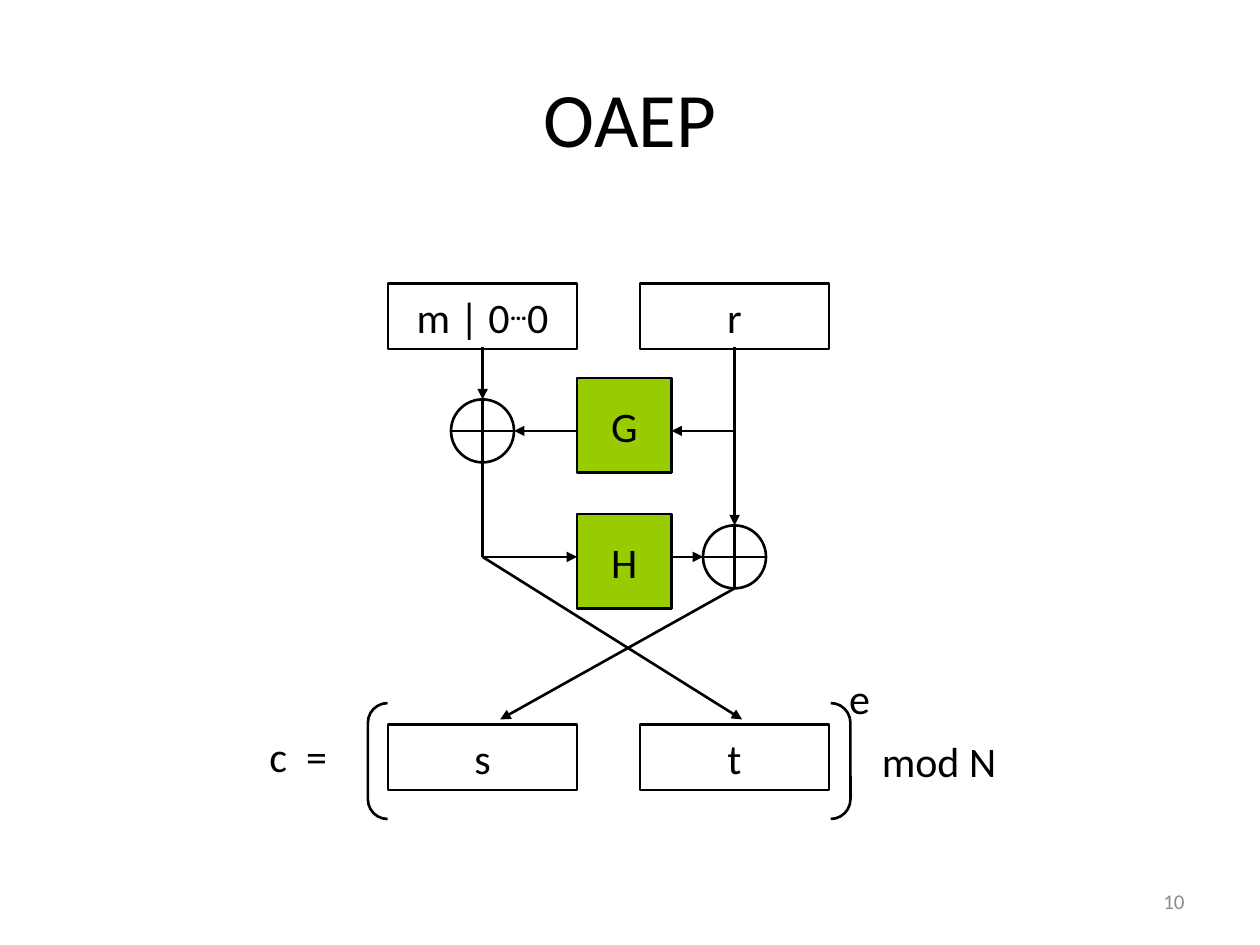
from dataclasses import dataclass

import lxml.etree
import pptx
import pptx.dml.color
import pptx.enum.shapes
import pptx.enum.text
import pptx.oxml.ns
import pptx.util
from pptx.util import Inches

SHAPE = pptx.enum.shapes.MSO_SHAPE
ALIGN = pptx.enum.text.PP_ALIGN
ANCHOR = pptx.enum.text.MSO_ANCHOR


@dataclass(frozen=True)
class Theme:
    font: str = "Calibri"
    ink: str = "000000"
    paper: str = "FFFFFF"
    hash_fill: str = "99CC00"
    muted: str = "8C8C8C"
    title_size: int = 44
    body_size: int = 24
    number_size: int = 12
    line_width: float = 1.5


@dataclass(frozen=True)
class Span:
    text: str
    raised: bool = False


@dataclass(frozen=True)
class Box:
    left: float
    top: float
    width: float
    height: float
    fill: str
    spans: tuple[Span, ...]


@dataclass(frozen=True)
class Label:
    left: float
    top: float
    width: float
    height: float
    text: str


@dataclass(frozen=True)
class Wire:
    start: tuple[float, float]
    end: tuple[float, float]
    arrow: bool = True


THEME = Theme()
LEFT_X, RIGHT_X = 3.83, 5.83
MASK_Y, SEED_Y = 3.42, 4.42
RADIUS = 0.25
HASH_LEFT, HASH_SIZE = 4.58, 0.75
HASH_RIGHT = HASH_LEFT + HASH_SIZE
FIELD_WIDTH, FIELD_HEIGHT = 1.5, 0.52
INPUT_TOP, OUTPUT_TOP = 2.25, 5.75


def field(center: float, top: float, *spans: Span) -> Box:
    return Box(center - FIELD_WIDTH / 2, top, FIELD_WIDTH, FIELD_HEIGHT, THEME.paper, spans)


def hash_box(top: float, name: str) -> Box:
    return Box(HASH_LEFT, top, HASH_SIZE, HASH_SIZE, THEME.hash_fill, (Span(name),))


BOXES = (
    field(LEFT_X, INPUT_TOP, Span("m | 0"), Span("…", raised=True), Span("0")),
    field(RIGHT_X, INPUT_TOP, Span("r")),
    hash_box(3, "G"),
    hash_box(4.08, "H"),
    field(LEFT_X, OUTPUT_TOP, Span("s")),
    field(RIGHT_X, OUTPUT_TOP, Span("t")),
)

XOR_CENTERS = ((LEFT_X, MASK_Y), (RIGHT_X, SEED_Y))

WIRES = (
    Wire((RIGHT_X, 2.75), (RIGHT_X, MASK_Y), arrow=False),
    Wire((RIGHT_X, MASK_Y), (HASH_RIGHT, MASK_Y)),
    Wire((HASH_LEFT, MASK_Y), (LEFT_X + RADIUS, MASK_Y)),
    Wire((LEFT_X, 2.75), (LEFT_X, MASK_Y - RADIUS)),
    Wire((LEFT_X, MASK_Y + RADIUS), (LEFT_X, SEED_Y), arrow=False),
    Wire((LEFT_X, SEED_Y), (HASH_LEFT, SEED_Y)),
    Wire((HASH_RIGHT, SEED_Y), (RIGHT_X - RADIUS, SEED_Y)),
    Wire((RIGHT_X, MASK_Y), (RIGHT_X, SEED_Y - RADIUS)),
    Wire((LEFT_X, SEED_Y), (5.89, 5.71)),
    Wire((RIGHT_X, SEED_Y + RADIUS), (3.97, 5.71)),
)

LABELS = (
    Label(6.64, 5.29, 0.37, 0.5, "e"),
    Label(6.9, 5.79, 1.12, 0.5, "mod N"),
    Label(2.04, 5.75, 0.74, 0.5, "c  ="),
)


def color(value: str) -> pptx.dml.color.RGBColor:
    return pptx.dml.color.RGBColor.from_string(value)


def add_span(para, span: Span, size: int, ink: str = THEME.ink) -> None:
    run = para.add_run()
    run.text = span.text
    run.font.name = THEME.font
    run.font.size = pptx.util.Pt(size)
    run.font.color.rgb = color(ink)
    if span.raised:
        run.font.bold = True
        run._r.get_or_add_rPr().set("baseline", "30000")


def style_line(shape) -> None:
    shape.line.color.rgb = color(THEME.ink)
    shape.line.width = pptx.util.Pt(THEME.line_width)


def add_outline(shapes, kind, left: float, top: float, width: float, height: float, fill: str | None):
    shape = shapes.add_shape(kind, Inches(left), Inches(top), Inches(width), Inches(height))
    shape.shadow.inherit = False
    style_line(shape)
    if fill:
        shape.fill.solid()
        shape.fill.fore_color.rgb = color(fill)
    else:
        shape.fill.background()
    return shape


def draw_box(shapes, box: Box) -> None:
    shape = add_outline(shapes, SHAPE.RECTANGLE, box.left, box.top, box.width, box.height, box.fill)
    frame = shape.text_frame
    frame.vertical_anchor = ANCHOR.MIDDLE
    para = frame.paragraphs[0]
    para.alignment = ALIGN.CENTER
    for span in box.spans:
        add_span(para, span, THEME.body_size)


def draw_wire(shapes, wire: Wire) -> None:
    ends = [Inches(value) for value in (*wire.start, *wire.end)]
    connector = shapes.add_connector(pptx.enum.shapes.MSO_CONNECTOR.STRAIGHT, *ends)
    style_line(connector)
    properties = connector._element.spPr
    if wire.arrow:
        outline = properties.find(pptx.oxml.ns.qn("a:ln"))
        lxml.etree.SubElement(outline, pptx.oxml.ns.qn("a:tailEnd"), type="triangle")
    lxml.etree.SubElement(properties, pptx.oxml.ns.qn("a:effectLst"))


def draw_xor(shapes, x: float, y: float) -> None:
    group = shapes.add_group_shape().shapes
    add_outline(group, SHAPE.OVAL, x - RADIUS, y - RADIUS, 2 * RADIUS, 2 * RADIUS, THEME.paper)
    draw_wire(group, Wire((x - RADIUS, y), (x + RADIUS, y), arrow=False))
    draw_wire(group, Wire((x, y - RADIUS), (x, y + RADIUS), arrow=False))


def draw_label(shapes, label: Label, size: int = THEME.body_size, ink: str = THEME.ink,
               wrap: bool = False, align=ALIGN.LEFT, anchor=ANCHOR.TOP) -> None:
    frame = shapes.add_textbox(Inches(label.left), Inches(label.top),
                               Inches(label.width), Inches(label.height)).text_frame
    frame.word_wrap = wrap
    frame.vertical_anchor = anchor
    frame.paragraphs[0].alignment = align
    add_span(frame.paragraphs[0], Span(label.text), size, ink)


def main() -> None:
    deck = pptx.Presentation()
    deck.slide_width, deck.slide_height = Inches(10), Inches(7.5)
    page = deck.slides.add_slide(deck.slide_layouts.get_by_name("Title Only"))
    shapes = page.shapes

    title = shapes.title
    title.left, title.top = Inches(0.5), Inches(0.3)
    title.width, title.height = Inches(9), Inches(1.25)
    title.text_frame.vertical_anchor = ANCHOR.MIDDLE
    title.text_frame.paragraphs[0].alignment = ALIGN.CENTER
    add_span(title.text_frame.paragraphs[0], Span("OAEP"), THEME.title_size)

    for box in BOXES:
        draw_box(shapes, box)
    for x, y in XOR_CENTERS:
        draw_xor(shapes, x, y)
    for wire in WIRES:
        draw_wire(shapes, wire)
    brackets = add_outline(shapes, SHAPE.DOUBLE_BRACKET, 2.92, 5.58, 3.83, 0.92, None)
    brackets.adjustments[0] = 0.17
    for label in LABELS:
        draw_label(shapes, label)
    draw_label(shapes, Label(7.17, 6.95, 2.33, 0.4, "10"), THEME.number_size, THEME.muted,
               wrap=True, align=ALIGN.RIGHT, anchor=ANCHOR.MIDDLE)

    deck.save("out.pptx")


if __name__ == "__main__":
    main()
